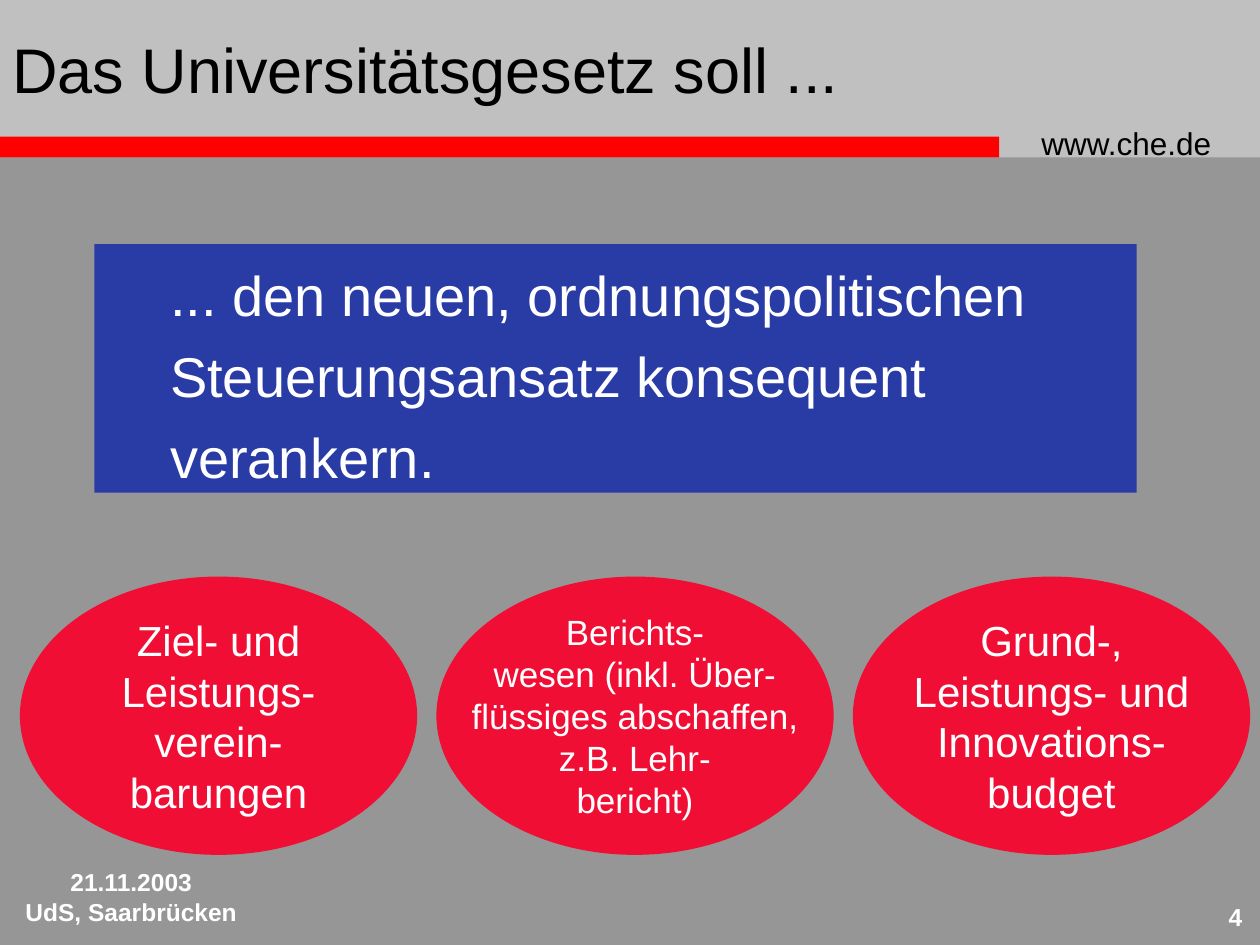
from dataclasses import dataclass
from typing import Optional

from pptx import Presentation
from pptx.dml.color import RGBColor
from pptx.enum.shapes import MSO_SHAPE as Shape
from pptx.enum.text import MSO_ANCHOR as Anchor, PP_ALIGN as Align
from pptx.util import Pt

BLACK = RGBColor(0x00, 0x00, 0x00)
WHITE = RGBColor(0xFF, 0xFF, 0xFF)
GREY = RGBColor(0x96, 0x96, 0x96)
SILVER = RGBColor(0xC0, 0xC0, 0xC0)
RED = RGBColor(0xFF, 0x00, 0x00)
CRIMSON = RGBColor(0xF0, 0x0E, 0x34)
BLUE = RGBColor(0x29, 0x3B, 0xA5)


@dataclass(frozen=True)
class Box:
    left: float
    top: float
    width: float
    height: float

    def emu(self) -> tuple:
        return Pt(self.left), Pt(self.top), Pt(self.width), Pt(self.height)


@dataclass(frozen=True)
class Text:
    lines: tuple
    size: float
    color: RGBColor = WHITE
    bold: bool = False
    align: Align = Align.LEFT
    anchor: Anchor = Anchor.TOP
    wrap: bool = True
    spacing: Optional[float] = None


def write(sp, text: Text) -> None:
    tf = sp.text_frame
    tf.word_wrap = text.wrap
    tf.vertical_anchor = text.anchor
    for i, line in enumerate(text.lines):
        p = tf.paragraphs[0] if i == 0 else tf.add_paragraph()
        p.text = line
        p.alignment = text.align
        if text.spacing:
            p.line_spacing = text.spacing
        p.font.name = "Arial"
        p.font.size = Pt(text.size)
        p.font.bold = text.bold
        p.font.color.rgb = text.color


def add_text(s, box: Box, text: Text) -> None:
    write(s.shapes.add_textbox(*box.emu()), text)


def add_filled(s, kind: Shape, box: Box, fill: RGBColor, border: float = 0):
    sp = s.shapes.add_shape(kind, *box.emu())
    sp.shadow.inherit = False
    sp.fill.solid()
    sp.fill.fore_color.rgb = fill
    if border:
        sp.line.color.rgb = fill
        sp.line.width = Pt(border)
    else:
        sp.line.fill.background()
    return sp


OVALS = (
    (24, ("Ziel- und", "Leistungs-", "verein-", "barungen")),
    (20, ("Berichts-", "wesen (inkl. Über-", "flüssiges abschaffen,", "z.B. Lehr-", "bericht)")),
    (24, ("Grund-,", "Leistungs- und", "Innovations-", "budget")),
)
OVAL_LEFT, OVAL_PITCH = 14.4, 238


def main() -> None:
    prs = Presentation()
    prs.slide_width, prs.slide_height = Pt(720), Pt(540)
    s = prs.slides.add_slide(prs.slide_layouts[6])
    s.background.fill.solid()
    s.background.fill.fore_color.rgb = GREY

    add_filled(s, Shape.RECTANGLE, Box(0, 0, 720, 90), SILVER)
    add_filled(s, Shape.RECTANGLE, Box(0, 78, 571, 12), RED)
    add_text(s, Box(588, 67.5, 126, 29), Text(("www.che.de",), 18, BLACK))
    add_text(s, Box(0, 492, 150, 36),
             Text(("21.11.2003", "UdS, Saarbrücken"), 14, bold=True, align=Align.CENTER))
    add_text(s, Box(675, 512, 42, 30), Text(("4",), 14, bold=True, align=Align.RIGHT))
    add_text(s, Box(0, 0, 582, 78),
             Text(("Das Universitätsgesetz soll ...",), 36, BLACK, anchor=Anchor.MIDDLE))

    claim = add_filled(s, Shape.RECTANGLE, Box(54, 139.5, 595.5, 142), BLUE)
    claim.text_frame.margin_left = Pt(43.2)
    write(claim, Text(("... den neuen, ordnungspolitischen", "Steuerungsansatz konsequent",
                       "verankern."), 32, anchor=Anchor.MIDDLE, wrap=False, spacing=1.2))

    for i, (size, lines) in enumerate(OVALS):
        box = Box(OVAL_LEFT + i * OVAL_PITCH, 332.5, 221, 153)
        oval = add_filled(s, Shape.OVAL, box, CRIMSON, 6)
        write(oval, Text(lines, size, align=Align.CENTER, anchor=Anchor.MIDDLE, wrap=False))

    prs.save("out.pptx")


if __name__ == "__main__":
    main()
